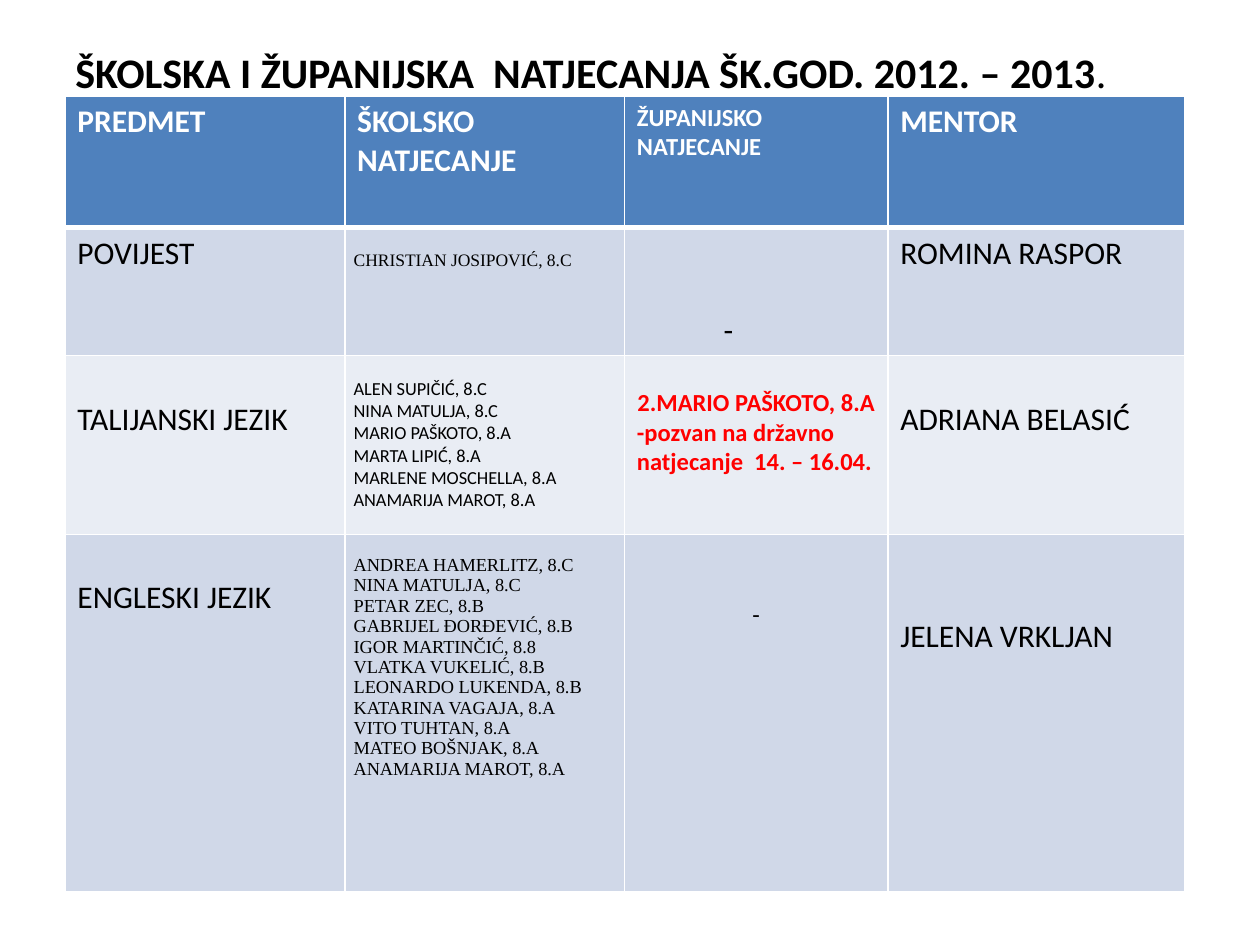
from lxml.etree import SubElement
from pptx import Presentation
from pptx.dml.color import RGBColor
from pptx.enum.text import MSO_ANCHOR as Anchor, PP_ALIGN as Align
from pptx.oxml.ns import qn
from pptx.util import Cm, Pt

COLORS = {"text": "000000", "white": "FFFFFF", "red": "FF0000",
          "header": "4F81BD", "odd": "D0D8E8", "even": "E9EDF4"}
SERIF = "Times New Roman"
TITLE = "ŠKOLSKA I ŽUPANIJSKA  NATJECANJA ŠK.GOD. 2012. – 2013"

TABLE_LEFT, TABLE_TOP = 1.31, 1.94
COL_WIDTHS = [5.64, 5.64, 5.31, 5.99]
ROW_HEIGHTS = [2.65, 2.58, 3.6, 7.2]
SIDE, TOP = 0.25, 0.13   # usual cell margins
NAMES_SIDE = 0.18        # side margin of the pupil lists

HEADERS = [("PREDMET", 18), ("ŠKOLSKO NATJECANJE", 18),
           ("ŽUPANIJSKO NATJECANJE", 14), ("MENTOR", 18)]

# "drop" is the distance from the top of the cell to the text, in cm
ROWS = [
    {"subject": ("POVIJEST", TOP),
     "school": (["CHRISTIAN JOSIPOVIĆ, 8.C"], dict(drop=0.47, size=10, font=SERIF)),
     "county": (["-"], dict(drop=1.68, right=SIDE + 1.12, align=Align.CENTER)),
     "mentor": ("ROMINA RASPOR", TOP)},
    {"subject": ("TALIJANSKI JEZIK", 0.9),
     "school": (["ALEN SUPIČIĆ, 8.C", "NINA MATULJA, 8.C", "MARIO PAŠKOTO, 8.A",
                 "MARTA LIPIĆ, 8.A", "MARLENE MOSCHELLA, 8.A",
                 "ANAMARIJA MAROT, 8.A"], dict(drop=0.45, size=10.5)),
     "county": (["2.MARIO PAŠKOTO, 8.A",
                 "-pozvan na državno natjecanje  14. – 16.04."],
                dict(drop=0.65, size=14, color="red", bold=True)),
     "mentor": ("ADRIANA BELASIĆ", 0.9)},
    {"subject": ("ENGLESKI JEZIK", 0.9),
     "school": (["ANDREA HAMERLITZ, 8.C", "NINA MATULJA, 8.C", "PETAR ZEC, 8.B",
                 "GABRIJEL ĐORĐEVIĆ, 8.B", "IGOR MARTINČIĆ, 8.8",
                 "VLATKA VUKELIĆ, 8.B", "LEONARDO LUKENDA, 8.B",
                 "KATARINA VAGAJA, 8.A", "VITO TUHTAN, 8.A",
                 "MATEO BOŠNJAK, 8.A", "ANAMARIJA MAROT, 8.A"],
                dict(drop=0.42, size=10.5, font=SERIF)),
     "county": (["-"], dict(drop=1.33, size=14, align=Align.CENTER)),
     "mentor": ("JELENA VRKLJAN", 1.68)},
]


def add_run(p, text, size=18, font="Calibri", color="text", bold=False):
    r = p.add_run()
    r.text = text
    r.font.size, r.font.name, r.font.bold = Pt(size), font, bold
    r.font.color.rgb = RGBColor.from_string(COLORS[color])


def set_borders(cell, top=1, bottom=1):
    tc_pr = cell._tc.get_or_add_tcPr()
    for side, width in (("L", 1), ("R", 1), ("T", top), ("B", bottom)):
        ln = SubElement(tc_pr, qn(f"a:ln{side}"), w=str(Pt(width)))
        fill = SubElement(ln, qn("a:solidFill"))
        SubElement(fill, qn("a:srgbClr"), val=COLORS["white"])


def fill_cell(cell, lines, fill, drop=TOP, side=SIDE, right=None,
              align=Align.LEFT, **fmt):
    cell.margin_left = Cm(side)
    cell.margin_right = Cm(side if right is None else right)
    cell.margin_top = Cm(drop)
    cell.fill.solid()
    cell.fill.fore_color.rgb = RGBColor.from_string(COLORS[fill])
    tf = cell.text_frame
    for i, line in enumerate(lines):
        p = tf.add_paragraph() if i else tf.paragraphs[0]
        p.alignment = align
        add_run(p, line, **fmt)


def add_title(s):
    tf = s.shapes.add_textbox(Cm(1.27), Cm(0.76), Cm(23.42), Cm(1.37)).text_frame
    tf.word_wrap = True
    tf.vertical_anchor = Anchor.MIDDLE
    p = tf.paragraphs[0]
    add_run(p, TITLE, size=24, bold=True)
    add_run(p, ".", size=24)


def add_results(s):
    table = s.shapes.add_table(
        len(ROW_HEIGHTS), len(COL_WIDTHS), Cm(TABLE_LEFT), Cm(TABLE_TOP),
        Cm(sum(COL_WIDTHS)), Cm(sum(ROW_HEIGHTS))).table
    for col, width in zip(table.columns, COL_WIDTHS):
        col.width = Cm(width)
    for row, height in zip(table.rows, ROW_HEIGHTS):
        row.height = Cm(height)

    for cell, (text, size) in zip(table.rows[0].cells, HEADERS):
        set_borders(cell, bottom=3)
        fill_cell(cell, [text], "header", size=size, color="white", bold=True)

    for i, entry in enumerate(ROWS, start=1):
        fill = "odd" if i % 2 else "even"
        subject, school, county, mentor = table.rows[i].cells
        for cell in (subject, school, county, mentor):
            set_borders(cell, top=3 if i == 1 else 1)
        for cell, key in ((subject, "subject"), (mentor, "mentor")):
            text, drop = entry[key]
            fill_cell(cell, [text], fill, drop=drop)
        names, fmt = entry["school"]
        fill_cell(school, names, fill, side=NAMES_SIDE, **fmt)
        results, fmt = entry["county"]
        fill_cell(county, results, fill, **fmt)
        if len(results) > 1:
            county.text_frame.paragraphs[0].alignment = Align.CENTER


def main():
    prs = Presentation()
    prs.slide_width, prs.slide_height = Cm(25.4), Cm(19.05)
    s = prs.slides.add_slide(prs.slide_layouts[6])
    add_title(s)
    add_results(s)
    prs.save("out.pptx")


if __name__ == "__main__":
    main()
